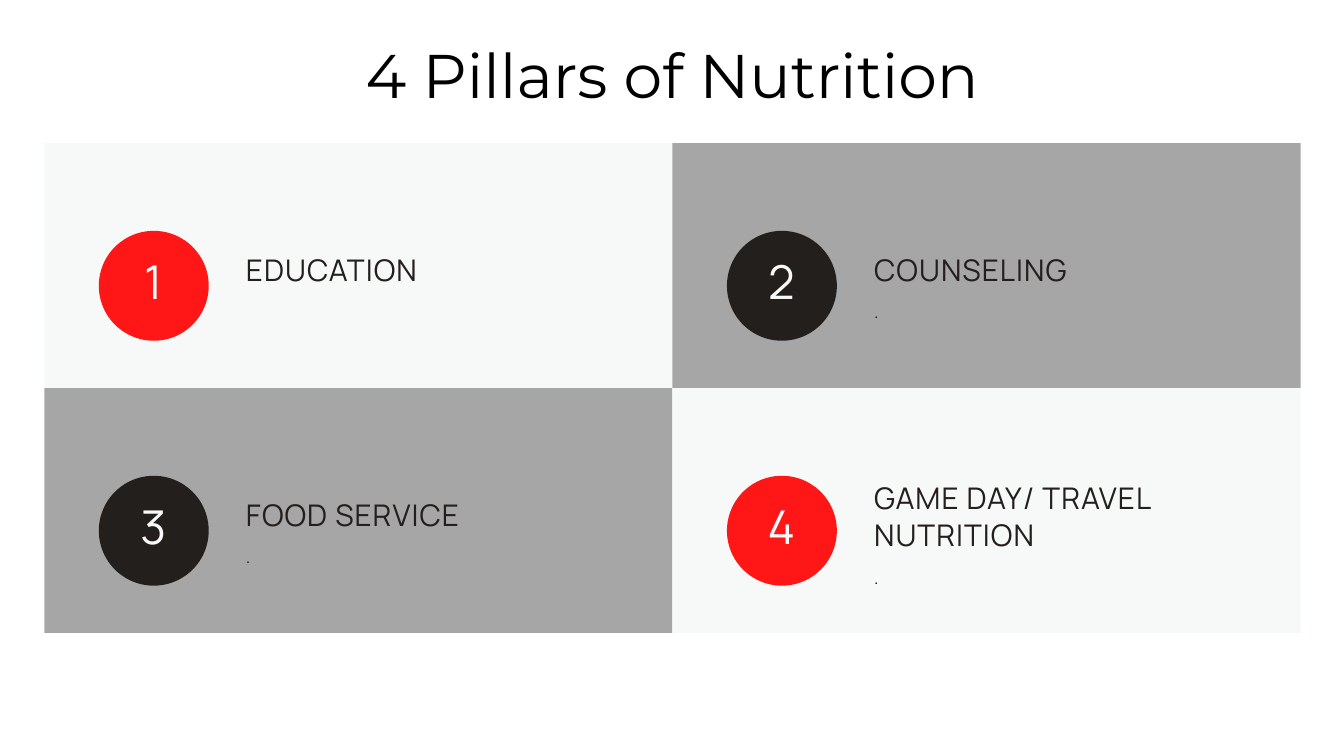
from dataclasses import dataclass

from pptx import Presentation
from pptx.dml.color import RGBColor
from pptx.enum.shapes import MSO_SHAPE as Shape
from pptx.enum.text import MSO_ANCHOR as Anchor, MSO_AUTO_SIZE as AutoSize, PP_ALIGN as Align
from pptx.util import Inches, Pt

LIGHT, GREY, DARK, RED = "F7F9F8", "A6A6A6", "231F1D", "FF1616"
GRID_LEFT, GRID_TOP = 0.44, 1.42
CELL_WIDTH, CELL_HEIGHT = 6.23, 2.43
LINE_HEIGHT, DOT_GAP = 0.38, 0.07


@dataclass(frozen=True)
class Pillar:
    label: str
    panel: str
    badge: str
    lines: int = 1
    dot: bool = True


@dataclass(frozen=True)
class Style:
    size: float
    color: str
    leading: float
    tracking: int = 0
    align: Align = Align.LEFT
    face: str = "Manrope"


PILLARS = [
    Pillar("EDUCATION", LIGHT, RED, dot=False),
    Pillar("COUNSELING", GREY, DARK),
    Pillar("FOOD SERVICE", GREY, DARK),
    Pillar("GAME DAY/ TRAVEL NUTRITION", LIGHT, RED, lines=2),
]
NUMBER = Style(33.3, LIGHT, Pt(46.7), align=Align.CENTER)
LABEL = Style(21.3, DARK, Pt(26.7), tracking=80)
DOT = Style(12.7, DARK, Pt(19), tracking=60)
TITLE = Style(44, "000000", 0.9, align=Align.CENTER, face="Montserrat")


def color_of(value: str) -> RGBColor:
    return RGBColor.from_string(value)


def assign(target, values: dict) -> None:
    for name, value in values.items():
        setattr(target, name, value)


def write(box, text: str, style: Style) -> None:
    para = box.text_frame.paragraphs[0]
    assign(para, {"alignment": style.align, "line_spacing": style.leading})
    span = para.add_run()
    span.text = text
    assign(span.font, {"name": style.face, "size": Pt(style.size)})
    span.font.color.rgb = color_of(style.color)
    if style.tracking:
        span._r.get_or_add_rPr().set("spc", str(style.tracking))


def add_filled(page, kind: Shape, left: float, top: float, width: float,
               height: float, color: str) -> None:
    shape = page.shapes.add_shape(kind, *map(Inches, (left, top, width, height)))
    shape.shadow.inherit = False
    shape.fill.solid()
    shape.fill.fore_color.rgb = color_of(color)
    shape.line.fill.background()


def add_text(page, left: float, top: float, width: float, height: float,
             text: str, style: Style) -> None:
    box = page.shapes.add_textbox(*map(Inches, (left, top, width, height)))
    assign(box.text_frame, {
        "word_wrap": True, "margin_left": 0, "margin_right": 0,
        "margin_top": 0, "margin_bottom": 0,
    })
    write(box, text, style)


def add_title(page, text: str) -> None:
    box = page.shapes.title
    assign(box, {"left": Inches(0.92), "top": Inches(0.4),
                 "width": Inches(11.5), "height": Inches(1.45)})
    assign(box.text_frame, {"vertical_anchor": Anchor.TOP, "word_wrap": True,
                            "auto_size": AutoSize.NONE})
    write(box, text, TITLE)


def add_pillar(page, index: int, pillar: Pillar) -> None:
    row, column = divmod(index, 2)
    left = GRID_LEFT + column * CELL_WIDTH
    top = GRID_TOP + row * CELL_HEIGHT
    add_filled(page, Shape.RECTANGLE, left, top, CELL_WIDTH, CELL_HEIGHT, pillar.panel)
    add_filled(page, Shape.OVAL, left + 0.54, top + 0.87, 1.09, 1.09, pillar.badge)
    add_text(page, left + 0.76, top + 1, 0.64, 0.66, str(index + 1), NUMBER)

    label_top = top + 1.06 - 0.17 * (pillar.lines - 1)
    label_height = LINE_HEIGHT * pillar.lines
    add_text(page, left + 2, label_top, 3.7, label_height, pillar.label, LABEL)
    if pillar.dot:
        add_text(page, left + 2, label_top + label_height + DOT_GAP, 3.67, 0.27, ".", DOT)


def main() -> None:
    deck = Presentation()
    assign(deck, {"slide_width": Inches(13.33), "slide_height": Inches(7.5)})
    page = deck.slides.add_slide(deck.slide_layouts.get_by_name("Title Only"))
    add_title(page, "4 Pillars of Nutrition")
    for index, pillar in enumerate(PILLARS):
        add_pillar(page, index, pillar)
    deck.save("out.pptx")


if __name__ == "__main__":
    main()
